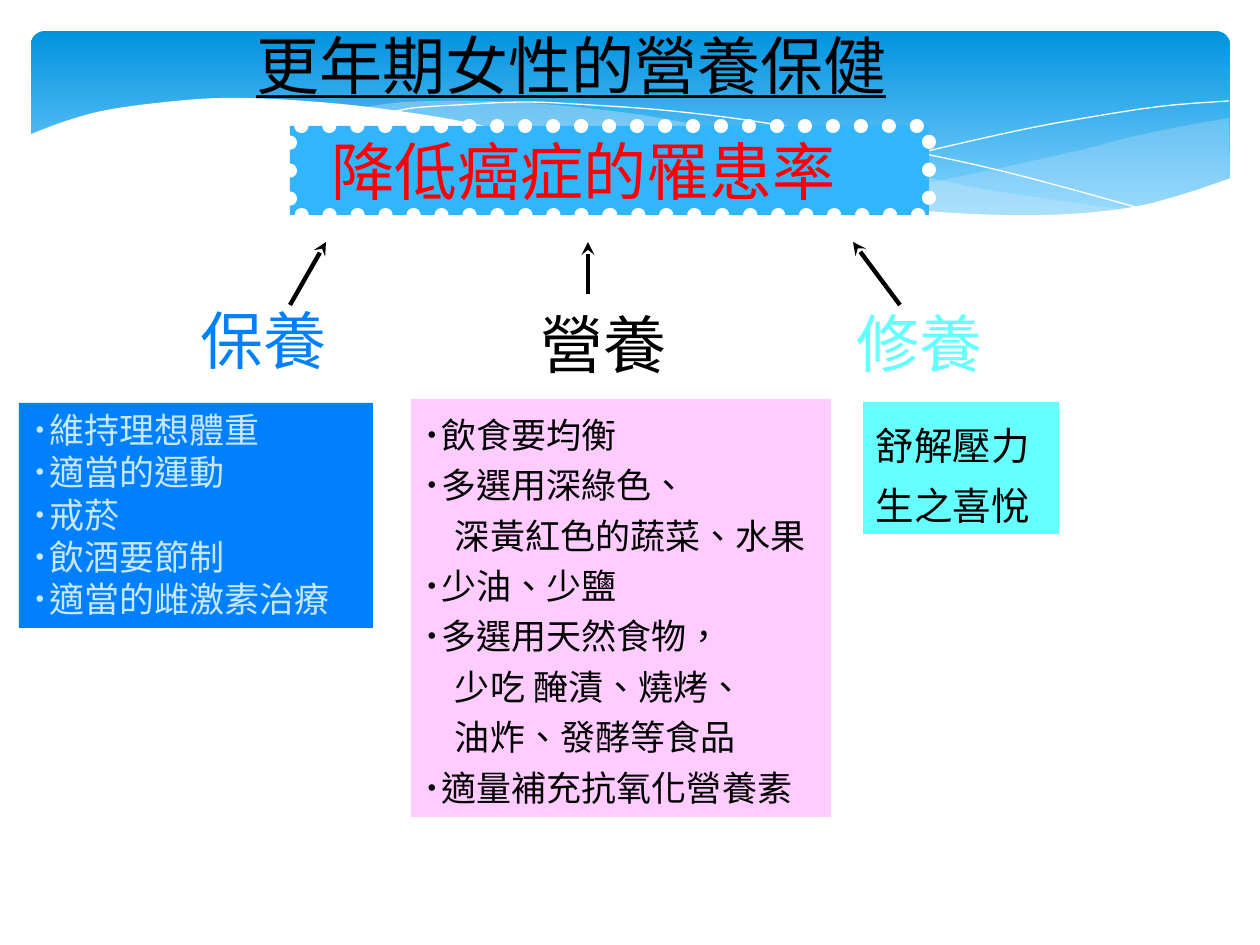
from dataclasses import dataclass
from itertools import chain

from lxml import etree
from pptx import Presentation
from pptx import util as u
from pptx.dml.color import RGBColor
from pptx.enum import dml, shapes, text
from pptx.oxml.ns import qn

SCALE = 914400 / 126


@dataclass(frozen=True)
class Theme:
    sky: str = "0293E0"
    haze: str = "83D3FE"
    mist: str = "C6E7FC"
    white: str = "FFFFFF"
    black: str = "000000"
    red: str = "FF0000"
    band: str = "31B6FD"
    blue: str = "0080FF"
    pink: str = "FFCCFF"
    aqua: str = "66FFFF"
    font: str = "Cabin"
    sans: str = "Noto Sans CJK SC"
    big: int = 36
    mid: int = 22
    small: int = 20


T = Theme()

RIGHT = (
    [(1229, 118), (1178, 127), (1123, 139), (1085, 149), (1014, 165),
     (919, 185), (833, 202)],
    [(833, 202), (888, 208), (954, 214), (1026, 217), (1087, 214),
     (1140, 205), (1187, 194), (1230, 178)],
)
SWELL = (
    [(1125, 210), (1055, 200), (977, 188), (890, 169), (793, 146),
     (717, 129), (648, 116), (586, 108), (529, 103), (479, 101),
     (433, 101), (394, 103), (360, 108)],
    [(360, 108), (407, 113), (456, 122), (509, 134), (566, 146),
     (668, 170), (757, 189), (838, 203), (910, 212), (974, 217),
     (1031, 218), (1080, 215), (1125, 210)],
)
FALL = [(389, 113), (413, 108), (457, 105), (524, 102), (591, 105),
        (672, 111), (766, 123), (876, 144), (1002, 171), (1143, 209)]
RISE = [(772, 190), (823, 178), (907, 156), (1016, 131), (1091, 117),
        (1164, 106), (1229, 101)]
SHORE = [(1231, 178), (1184, 194), (1133, 207), (1071, 214), (999, 215),
         (915, 210), (816, 197), (699, 175), (563, 144), (460, 121),
         (368, 107), (290, 100), (223, 98), (166, 102), (107, 110),
         (66, 121), (29, 135)]
BASE = [(29, 282), (1231, 282)]

CARE = ["˙維持理想體重", "˙適當的運動", "˙戒菸", "˙飲酒要節制", "˙適當的雌激素治療"]
FOOD = ["˙飲食要均衡", "˙多選用深綠色、", "深黃紅色的蔬菜、水果", "˙少油、少鹽",
        "˙多選用天然食物，", "少吃 醃漬、燒烤、", "油炸、發酵等食品",
        "˙適量補充抗氧化營養素"]
CALM = ["舒解壓力", "生之喜悅"]


def px(n):
    return u.Emu(round(n * SCALE))


def rgb(code):
    return RGBColor.from_string(code)


def paint(shape, color, alpha=None):
    shape.shadow.inherit = False
    shape.line.fill.background()
    shape.fill.solid()
    shape.fill.fore_color.rgb = rgb(color)
    if alpha:
        tone = shape.fill._xPr.find(".//" + qn("a:srgbClr"))
        etree.SubElement(tone, qn("a:alpha")).set("val", str(alpha * 1000))


def write(shape, lines, size=T.big, color=T.black, font=T.font, under=None,
          space=None, left=13, hang=0, anchor=text.MSO_ANCHOR.TOP, wrap=True):
    frame = shape.text_frame
    frame.auto_size = text.MSO_AUTO_SIZE.NONE
    frame.word_wrap = wrap
    frame.vertical_anchor = anchor
    frame.margin_left, frame.margin_right = px(left), px(13)
    frame.margin_top = frame.margin_bottom = px(6)
    for i, words in enumerate(lines):
        para = frame.add_paragraph() if i else frame.paragraphs[0]
        para.alignment = text.PP_ALIGN.LEFT
        para.line_spacing = space
        if hang and not words.startswith("˙"):
            para._p.get_or_add_pPr().set("marL", str(px(hang)))
        run = para.add_run()
        run.text = words
        run.font.size = u.Pt(size)
        run.font.name = font
        run.font.underline = under
        run.font.color.rgb = rgb(color)
        props = run.font._element
        props.set("lang", "zh-TW")
        etree.SubElement(props, qn("a:ea")).set("typeface", font)


def panel(slide, box, fill, lines, **form):
    shape = slide.shapes.add_shape(shapes.MSO_SHAPE.RECTANGLE, *map(px, box))
    paint(shape, fill)
    write(shape, lines, **form)
    return shape


def label(slide, box, words, **form):
    write(slide.shapes.add_textbox(*map(px, box)), [words], **form)


def curve(knots, steps=5):
    ends = [knots[0], *knots, knots[-1]]
    out = [knots[0]]
    for a, b, c, d in zip(ends, ends[1:], ends[2:], ends[3:]):
        for k in range(1, steps + 1):
            t = k / steps
            out.append(tuple(
                (2 * q + (r - p) * t + (2 * p - 5 * q + 4 * r - s) * t ** 2
                 + (3 * q - p - 3 * r + s) * t ** 3) / 2
                for p, q, r, s in zip(a, b, c, d)))
    return out


def trace(slide, points, close):
    dots = [(px(x), px(y)) for x, y in points]
    pen = slide.shapes.build_freeform(*dots[0])
    pen.add_line_segments(dots[1:], close=close)
    return pen.convert_to_shape()


def wave(slide, points, color, alpha=None):
    paint(trace(slide, points, True), color, alpha)


def thread(slide, knots):
    shape = trace(slide, curve(knots), False)
    shape.shadow.inherit = False
    shape.fill.background()
    shape.line.color.rgb = rgb(T.white)
    shape.line.width = u.Pt(0)


def arrow(slide, start, tip):
    line = slide.shapes.add_connector(
        shapes.MSO_CONNECTOR.STRAIGHT, *map(px, start + tip))
    line.line.color.rgb = rgb(T.black)
    line.line.width = u.Pt(2.5)
    etree.SubElement(line.line._get_or_add_ln(),
                     qn("a:tailEnd")).set("type", "stealth")
    etree.SubElement(line._element.spPr, qn("a:effectLst"))


def backdrop(slide):
    sky = slide.shapes.add_shape(shapes.MSO_SHAPE.ROUNDED_RECTANGLE,
                                 *map(px, (31, 31, 1199, 197)))
    sky.adjustments[0] = 0.07
    paint(sky, T.sky)
    sky.fill.gradient()
    sky.fill.gradient_angle = 270
    for stop, color, at in zip(sky.fill.gradient_stops,
                               (T.sky, T.haze), (0, 0.9)):
        stop.color.rgb = rgb(color)
        stop.position = at
    wave(slide, chain(*map(curve, RIGHT)), T.mist, 29)
    wave(slide, chain(*map(curve, SWELL)), T.mist, 40)
    thread(slide, FALL)
    thread(slide, RISE)
    wave(slide, curve(SHORE) + BASE, T.white)


def head(slide, box, words):
    title = slide.shapes.title
    title.left, title.top, title.width, title.height = map(px, box)
    write(title, [words], under=True)
    slide.shapes._spTree.append(title._element)


def banner(slide, box, words):
    shape = panel(slide, box, T.band, [words], color=T.red, font=T.sans,
                  left=41, anchor=text.MSO_ANCHOR.MIDDLE)
    shape.line.color.rgb = rgb(T.white)
    shape.line.width = u.Pt(8)
    shape.line.dash_style = dml.MSO_LINE.ROUND_DOT
    shape.line._get_or_add_ln().set("cap", "rnd")


def main():
    deck = Presentation()
    deck.slide_width, deck.slide_height = px(1260), px(945)
    slide = deck.slides.add_slide(deck.slide_layouts[5])
    backdrop(slide)
    head(slide, (243, 21, 713, 89), "更年期女性的營養保健")
    banner(slide, (290, 126, 639, 89), "降低癌症的罹患率")
    for start, tip in (((290, 305), (326, 242)), ((588, 294), (588, 242)),
                       ((900, 305), (853, 242))):
        arrow(slide, start, tip)
    label(slide, (187, 296, 168, 89), "保養", color=T.blue)
    label(slide, (527, 300, 221, 89), "營養")
    label(slide, (843, 299, 205, 89), "修養", color=T.aqua)
    panel(slide, (19, 403, 354, 225), T.blue, CARE, size=T.small, color=T.mist)
    panel(slide, (411, 399, 420, 418), T.pink, FOOD, size=T.small,
          space=1.2, hang=31)
    panel(slide, (863, 402, 196, 132), T.aqua, CALM, size=T.mid, space=1.3)
    deck.save("out.pptx")


if __name__ == "__main__":
    main()
